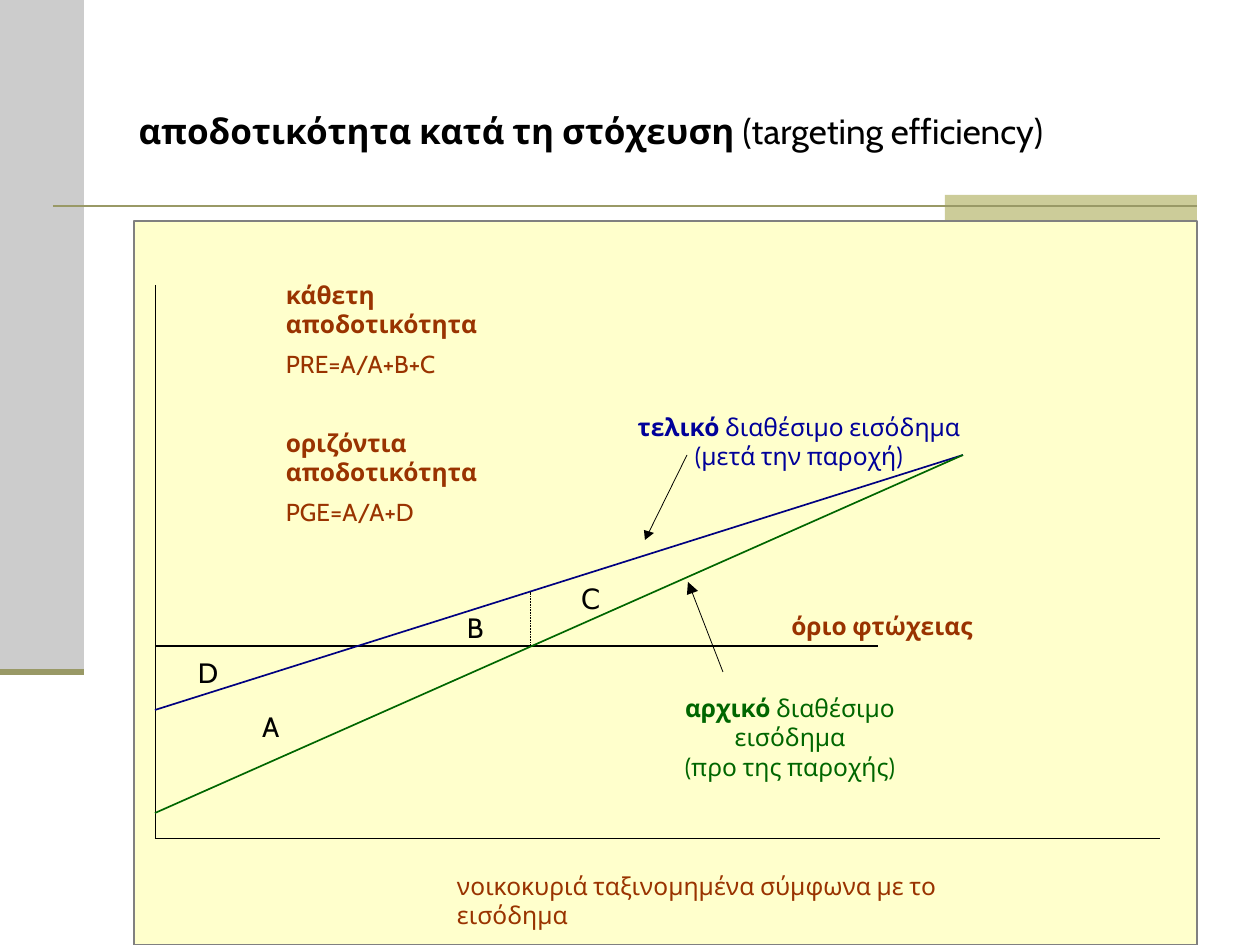
from pptx import Presentation
from pptx.dml.color import RGBColor
from pptx.enum.dml import MSO_LINE
from pptx.enum.shapes import MSO_CONNECTOR, MSO_SHAPE
from pptx.enum.text import MSO_ANCHOR, PP_ALIGN
from pptx.oxml.ns import qn
from pptx.util import Pt
from lxml import etree

SCALE = 914400 / 126
RECT = MSO_SHAPE.RECTANGLE
LINE = MSO_CONNECTOR.STRAIGHT
DOT = MSO_LINE.ROUND_DOT
LEFT, CENTER = PP_ALIGN.LEFT, PP_ALIGN.CENTER
MIDDLE, TOP = MSO_ANCHOR.MIDDLE, MSO_ANCHOR.TOP
BLACK, BROWN, BLUE, GREEN = "000000", "993300", "000099", "006600"
NAVY, OLIVE = "000080", "999966"


def px(*vals):
    return [round(v * SCALE) for v in vals]


def color(code):
    return RGBColor.from_string(code)


class Page:
    font = "Cabin"
    thin = 0.45
    mid = 0.95

    def __init__(self, slide):
        self.slide = slide
        self.shapes = slide.shapes

    def paint(self, shape, fill, edge=None):
        shape.shadow.inherit = False
        shape.fill.solid()
        shape.fill.fore_color.rgb = color(fill)
        if edge:
            shape.line.color.rgb = color(edge)
            shape.line.width = Pt(1.25)
        else:
            shape.line.fill.background()

    def rect(self, box, fill, edge=None):
        self.paint(self.shapes.add_shape(RECT, *px(*box)), fill, edge)

    def line(self, start, end, hue=BLACK, width=thin, dash=None):
        rule = self.shapes.add_connector(LINE, *px(*start, *end))
        rule.line.color.rgb = color(hue)
        rule.line.width = Pt(width)
        if dash:
            rule.line.dash_style = dash
        etree.SubElement(rule._element.spPr, qn("a:effectLst"))

    def arrow(self, start, neck, head):
        self.line(start, neck)
        pen = self.shapes.build_freeform(*head[0], scale=SCALE)
        pen.add_line_segments(head[1:], close=True)
        self.paint(pen.convert_to_shape(), BLACK)

    def runs(self, para, parts, size, hue, font):
        for words, bold in parts:
            run = para.add_run()
            run.text = words
            run.font.size = Pt(size)
            run.font.name = font
            run.font.bold = bold
            run.font.color.rgb = color(hue)

    def title(self, box, parts, size):
        shape = self.shapes.title
        shape.left, shape.top, shape.width, shape.height = px(*box)
        frame = shape.text_frame
        frame.vertical_anchor = MIDDLE
        frame.paragraphs[0].alignment = LEFT
        self.runs(frame.paragraphs[0], parts, size, BLACK, self.font)

    def text(self, box, paras, hue=BROWN, size=14, align=LEFT, after=0, font=font):
        frame = self.shapes.add_textbox(*px(*box)).text_frame
        frame.word_wrap = True
        frame.vertical_anchor = TOP
        frame.margin_left = frame.margin_right = 0
        frame.margin_top = frame.margin_bottom = 0
        for i, parts in enumerate(paras):
            para = frame.add_paragraph() if i else frame.paragraphs[0]
            para.alignment = align
            para.space_after = Pt(after)
            self.runs(para, parts, size, hue, font)
        return frame


def main():
    deck = Presentation()
    deck.slide_width, deck.slide_height = px(1260, 945)
    page = Page(deck.slides.add_slide(deck.slide_layouts[5]))

    page.rect((0, 0, 84, 672), "CCCCCC")
    page.rect((945, 195, 252, 26), "CCCC99")
    page.line((53, 206), (1197, 206), OLIVE, 1.5)
    page.line((0, 672), (84, 672), OLIVE, 3.5)
    page.title((126, 68, 1071, 125), [
        ("αποδοτικότητα κατά τη στόχευση ", True),
        ("(targeting efficiency)", False)], 20)

    page.rect((134, 221, 1063, 724), "FFFFCC", "808080")
    axis, peak, cross = 155, (963, 455), 646
    page.line((axis, 285), (axis, 838))
    page.line((axis, 838), (1160, 838))
    page.line((axis, cross), (878, cross), width=page.mid)
    page.line((axis, 710), peak, NAVY, page.mid)
    page.line((axis, 813), peak, GREEN, page.mid)
    page.line((530, cross), (530, 592), dash=DOT)

    for mark, x, y, font in (
        ("A", 262, 709, "Cabin"),
        ("C", 581, 582, "DejaVu Sans"),
        ("B", 467, 611, "Cabin"),
        ("D", 198, 656, "Cabin"),
    ):
        page.text((x, y, 21, 34), [[(mark, False)]], BLACK, 16, font=font)

    page.arrow((687, 455), (649, 532), [(644, 530), (645, 540), (654, 533)])
    page.arrow((723, 672), (692, 592), [(698, 591), (688, 582), (687, 595)])

    page.text((622, 412, 354, 59), [
        [("τελικό ", True), ("διαθέσιμο εισόδημα", False)],
        [("(μετά την παροχή)", False)]], BLUE, align=CENTER)
    page.text((640, 693, 300, 88), [
        [("αρχικό ", True), ("διαθέσιμο εισόδημα", False)],
        [("(προ της παροχής)", False)]], GREEN, align=CENTER)
    page.text((457, 871, 557, 59), [
        [("νοικοκυριά ταξινομημένα σύμφωνα με το εισόδημα", False)]])
    rates = page.text((286, 280, 209, 248), [
        [("κάθετη αποδοτικότητα", True)],
        [("PRE=A/A+B+C", False)],
        [("οριζόντια αποδοτικότητα", True)],
        [("PGE=A/A+D", False)]], after=6)
    rates.paragraphs[2].space_before = Pt(22)
    page.text((786, 611, 192, 43), [[("όριο φτώχειας", True)]], align=CENTER)

    deck.save("out.pptx")


if __name__ == "__main__":
    main()
